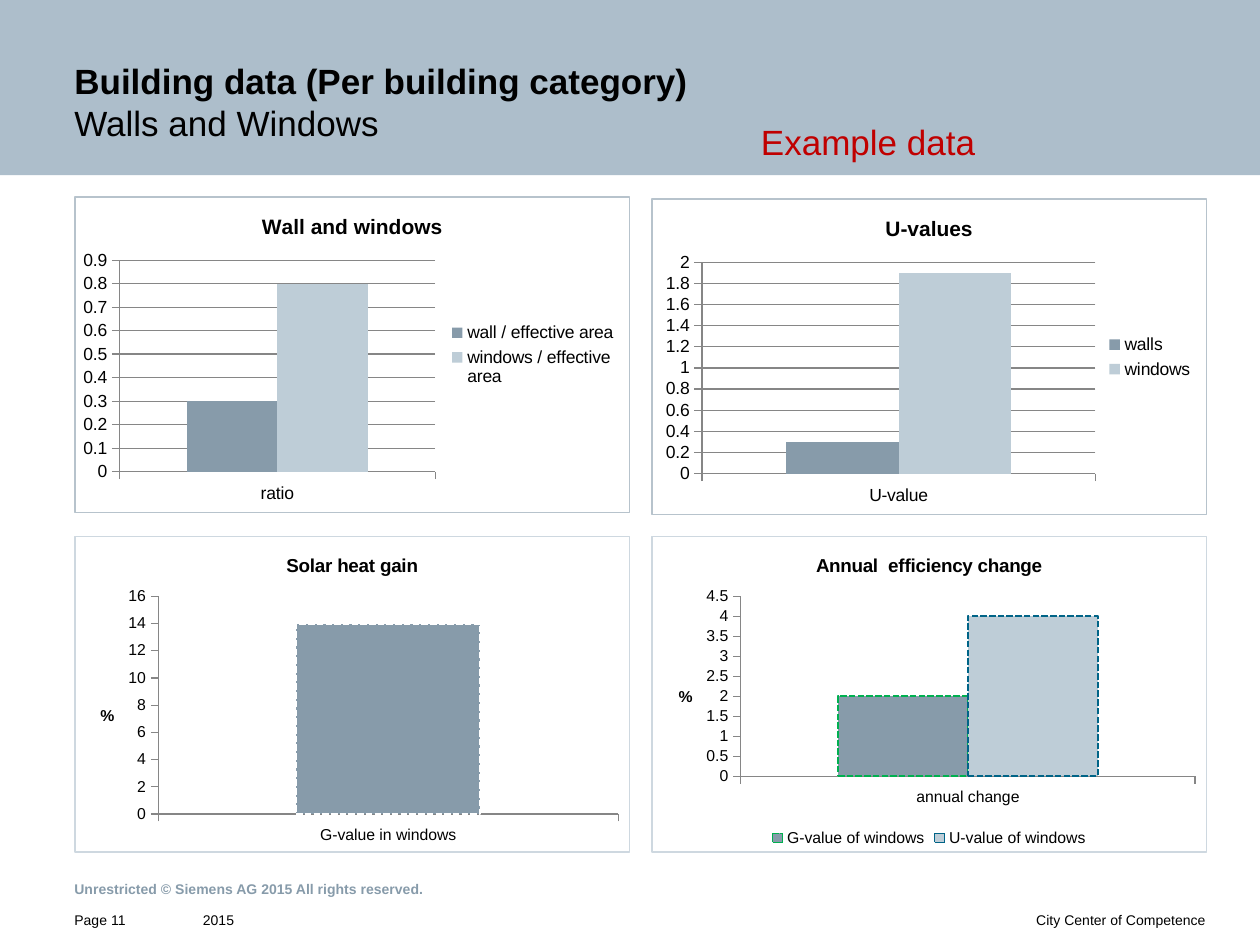
"""Builds the walls and windows slide of the building data report."""
from dataclasses import dataclass

from pptx import Presentation, util as u
from pptx.chart.data import CategoryChartData
from pptx.dml.color import RGBColor
from pptx.enum import chart as charts, dml, shapes, text
from pptx.oxml import parse_xml
from pptx.oxml.ns import nsdecls


@dataclass(frozen=True)
class Theme:
    """Colours, type sizes and the font of the slide."""
    font: str = "Arial"
    band: str = "ADBECB"
    black: str = "000000"
    white: str = "FFFFFF"
    red: str = "C00000"
    green: str = "00B050"
    petrol: str = "006487"
    axis: str = "868686"
    dark: str = "879BAA"
    light: str = "BECDD7"
    strong_border: str = "B7C3CC"
    soft_border: str = "CED8E0"
    heading: int = 20
    footer: int = 8


def apply(target, values):
    """Set every attribute in the dict on the target."""
    for name, value in values.items():
        setattr(target, name, value)


class SlideBuilder:
    """Holds the theme and the current slide."""

    def __init__(self, slide, theme):
        self.slide, self.theme = slide, theme

    def style_font(self, font, size, color, bold=False):
        """Give a font its face, size, weight and colour."""
        apply(font, {"name": self.theme.font, "size": u.Pt(size), "bold": bold})
        font.color.rgb = RGBColor.from_string(color)

    def style_line(self, line, color, width=0.75):
        """Give a line its colour and width."""
        line.color.rgb = RGBColor.from_string(color)
        line.width = u.Pt(width)

    def band(self, box, color):
        """Add a plain filled rectangle."""
        shape = self.slide.shapes.add_shape(shapes.MSO_SHAPE.RECTANGLE, *map(u.Cm, box))
        shape.shadow.inherit = False
        shape.fill.solid()
        shape.fill.fore_color.rgb = RGBColor.from_string(color)
        shape.line.fill.background()

    def text(self, box, lines, size, color, insets=(0, 0, 0, 0), anchor="TOP", align="LEFT", spacing=1.1):
        """Add a text box with one (wording, bold) pair per paragraph."""
        frame = self.slide.shapes.add_textbox(*map(u.Cm, box)).text_frame
        sides = ("margin_left", "margin_top", "margin_right", "margin_bottom")
        apply(frame, {"word_wrap": True, "vertical_anchor": text.MSO_ANCHOR[anchor],
                      **dict(zip(sides, map(u.Cm, insets)))})
        for index, (wording, bold) in enumerate(lines):
            paragraph = frame.add_paragraph() if index else frame.paragraphs[0]
            apply(paragraph, {"alignment": text.PP_ALIGN[align], "line_spacing": spacing})
            run = paragraph.add_run()
            run.text = wording
            self.style_font(run.font, size, color, bold)

    def chart(self, box, title, category, series, top, step, plot_area, border, size,
              title_size, legend=None, grid=False, unit=None):
        """Add a clustered column chart with (name, value, fill, outline) series."""
        theme = self.theme
        data = CategoryChartData()
        data.categories = [category]
        for name, value, *_ in series:
            data.add_series(name, [value])
        chart = self.slide.shapes.add_chart(
            charts.XL_CHART_TYPE.COLUMN_CLUSTERED, *map(u.Cm, box), data).chart
        self.style_font(chart.font, size, theme.black)
        apply(chart, {"has_title": True, "has_legend": legend is not None})
        self.chart_title(chart.chart_title, title, title_size)
        if legend:
            apply(chart.legend, {"position": charts.XL_LEGEND_POSITION[legend], "include_in_layout": False})
            self.style_font(chart.legend.font, size, theme.black)

        plot = chart.plots[0]
        apply(plot, {"gap_width": 150, "overlap": 0, "vary_by_categories": False})
        for column, (_, _, fill, outline) in zip(plot.series, series):
            column.format.fill.solid()
            column.format.fill.fore_color.rgb = RGBColor.from_string(fill)
            if outline:
                self.style_line(column.format.line, outline, 1.25)
                column.format.line.dash_style = dml.MSO_LINE.SQUARE_DOT

        value_axis = chart.value_axis
        apply(value_axis, {"minimum_scale": 0, "maximum_scale": top, "major_unit": step,
                           "has_major_gridlines": grid})
        for axis in (chart.category_axis, value_axis):
            axis.major_tick_mark = charts.XL_TICK_MARK.OUTSIDE
            self.style_line(axis.format.line, theme.axis)
            self.style_font(axis.tick_labels.font, size, theme.black)
        if grid:
            self.style_line(value_axis.major_gridlines.format.line, theme.axis)
        if unit:
            self.chart_title(value_axis.axis_title, unit, size)
            for body in chart.element.xpath(".//c:valAx/c:title//a:bodyPr"):
                apply_xml = {"rot": "0", "vert": "horz"}
                for name, value in apply_xml.items():
                    body.set(name, value)
        self.frame_chart(chart, plot_area, border)

    def chart_title(self, title, wording, size):
        """Write a bold chart or axis title."""
        paragraph = title.text_frame.paragraphs[0]
        run = paragraph.add_run()
        run.text = wording
        self.style_font(run.font, size, self.theme.black, True)

    def frame_chart(self, chart, plot_area, border):
        """Place the inner plot area and outline the chart."""
        area = chart.element.xpath("c:chart/c:plotArea")[0]
        for layout in area.xpath("c:layout"):
            area.remove(layout)
        modes = '<c:xMode val="edge"/><c:yMode val="edge"/>'
        sizes = "".join(f'<c:{side} val="{value}"/>' for side, value in zip("xywh", plot_area))
        area.insert(0, parse_xml(
            f'<c:layout {nsdecls("c")}><c:manualLayout><c:layoutTarget val="inner"/>'
            f'{modes}{sizes}</c:manualLayout></c:layout>'))
        chart.element.xpath("c:chart")[0].addnext(parse_xml(
            f'<c:spPr {nsdecls("c", "a")}><a:noFill/><a:ln w="{u.Pt(0.75)}"><a:solidFill>'
            f'<a:srgbClr val="{border}"/></a:solidFill></a:ln></c:spPr>'))


def main():
    """Build and save the slide."""
    theme = Theme()
    presentation = Presentation()
    apply(presentation, {"slide_width": u.Cm(25.4), "slide_height": u.Cm(19.05)})
    builder = SlideBuilder(presentation.slides.add_slide(presentation.slide_layouts[6]), theme)

    header = (0, 0, 25.4, 3.53)
    builder.band(header, theme.band)
    footers = (
        ((0, 18.34, 7.87, 0.71), "2015", (4.09, 0, 0, 0.33), "LEFT"),
        ((0, 18.34, 3.86, 0.71), "Page 11", (1.5, 0, 0, 0.33), "LEFT"),
        ((7.49, 18.34, 17.91, 0.71), "City Center of Competence", (0, 0, 1.09, 0.33), "RIGHT"),
    )
    for box, wording, insets, align in footers:
        builder.text(box, [(wording, False)], theme.footer, theme.black, insets, align=align)
    builder.text((0, 17.12, 25.4, 1.19), [("Unrestricted © Siemens AG 2015 All rights reserved.", True)],
                 theme.footer, theme.dark, (1.5, 0.41, 5.89, 0), "MIDDLE", spacing=1)
    builder.text(header, [("Building data (Per building category)", True), ("Walls and Windows", False)],
                 theme.heading, theme.black, (1.5, 1.09, 5.89, 0.66), "BOTTOM", spacing=1)

    left, right, width, height = 1.5, 13.13, 11.2, 6.39
    upper = {"border": theme.strong_border, "size": 10, "title_size": 12, "legend": "RIGHT", "grid": True}
    lower = {"border": theme.soft_border, "size": 9, "title_size": 10.8, "unit": "%"}
    builder.chart((right, 10.8, width, height), "Annual  efficiency change", "annual change",
                  [("G-value of windows", 2, theme.dark, theme.green),
                   ("U-value of windows", 4, theme.light, theme.petrol)],
                  4.5, 0.5, (0.16, 0.19, 0.82, 0.57), legend="BOTTOM", **lower)
    builder.chart((left, 10.8, width, height), "Solar heat gain", "G-value in windows",
                  [("Series 1", 14, theme.dark, theme.white)],
                  16, 2, (0.15, 0.19, 0.83, 0.69), **lower)
    builder.chart((left, 3.96, width, height), "Wall and windows", "ratio",
                  [("wall / effective area", 0.3, theme.dark, None),
                   ("windows / effective area", 0.8, theme.light, None)],
                  0.9, 0.1, (0.08, 0.2, 0.57, 0.67), **upper)
    builder.chart((right, 4, width, height), "U-values", "U-value",
                  [("walls", 0.3, theme.dark, None), ("windows", 1.9, theme.light, None)],
                  2, 0.2, (0.09, 0.2, 0.71, 0.67), **upper)
    builder.text((15.34, 2.34, 6.68, 0.86), [("Example data", False)], theme.heading, theme.red)
    presentation.save("out.pptx")


if __name__ == "__main__":
    main()
